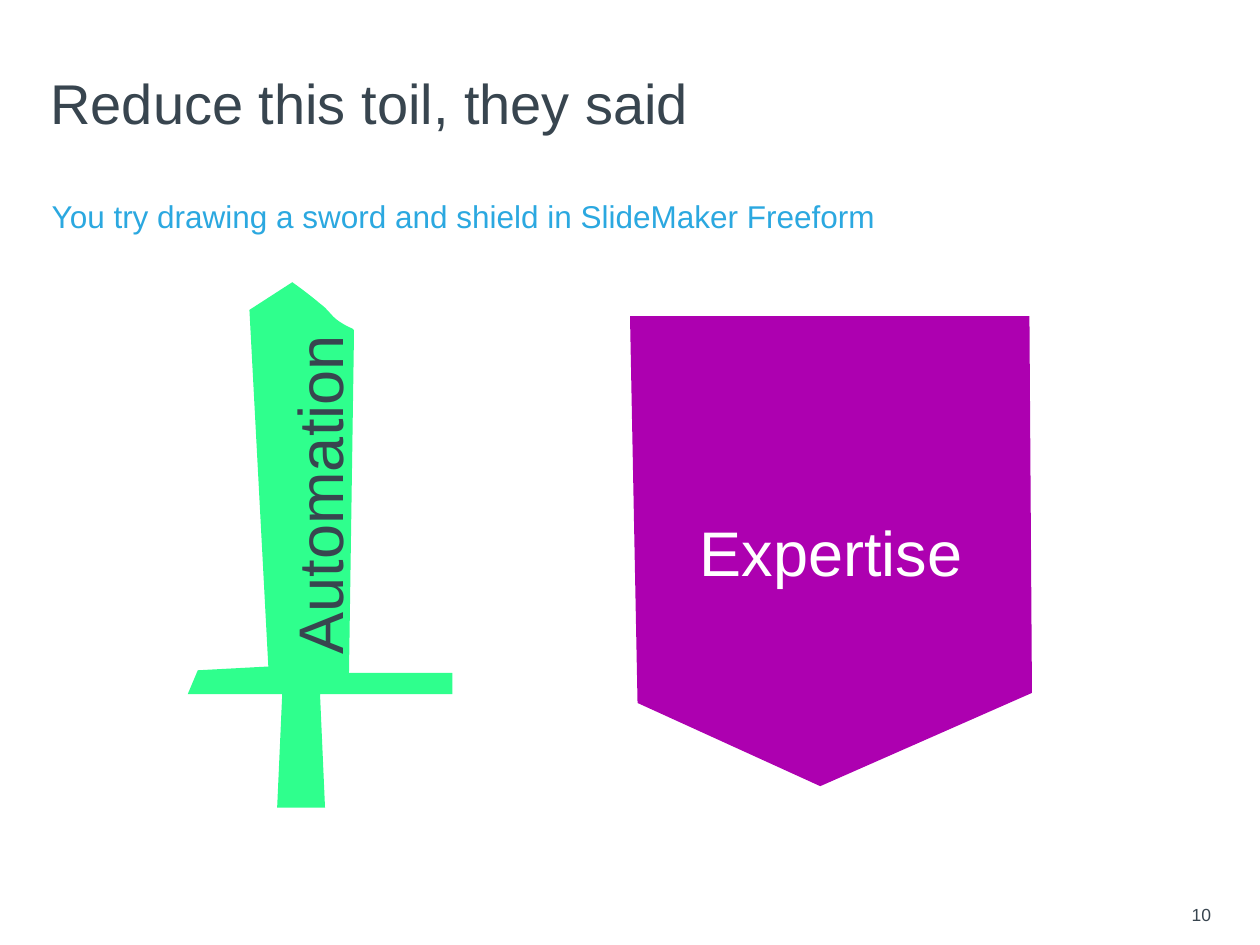
from dataclasses import dataclass

import pptx
import pptx.util
from lxml import etree
from pptx.dml.color import RGBColor
from pptx.enum.text import MSO_ANCHOR, MSO_AUTO_SIZE, PP_ALIGN
from pptx.util import Inches

SLATE = RGBColor(0x38, 0x45, 0x4F)
SKY = RGBColor(0x2B, 0xA8, 0xE0)
GREEN = RGBColor(0x2F, 0xFF, 0x8D)
PURPLE = RGBColor(0xAD, 0x00, 0xB0)
WHITE = RGBColor(0xFF, 0xFF, 0xFF)

Point = tuple[float, float]


@dataclass
class Outline:
    points: list[Point]
    color: RGBColor


def curve(start: Point, first: Point, second: Point, end: Point, steps: int = 8) -> list[Point]:
    """Points along a cubic curve, without its start."""
    points = []
    for step in range(1, steps + 1):
        t = step / steps
        weights = ((1 - t) ** 3, 3 * t * (1 - t) ** 2, 3 * t * t * (1 - t), t ** 3)
        corners = (start, first, second, end)
        points.append(tuple(sum(w * c[axis] for w, c in zip(weights, corners))
                            for axis in (0, 1)))
    return points


def draw_outline(page, outline: Outline):
    points = [(Inches(x), Inches(y)) for x, y in outline.points]
    builder = page.shapes.build_freeform(*points[0])
    builder.add_line_segments(points[1:], close=True)
    shape = builder.convert_to_shape()
    shape.shadow.inherit = False
    shape.fill.solid()
    shape.fill.fore_color.rgb = outline.color
    shape.line.fill.background()
    return shape


def place(box, left: float, top: float, width: float, height: float):
    box.left, box.top = Inches(left), Inches(top)
    box.width, box.height = Inches(width), Inches(height)
    return box


def write(box, text: str, *, size: float, color: RGBColor, align=PP_ALIGN.LEFT,
          anchor=MSO_ANCHOR.MIDDLE, inset: float | None = None,
          wrap: bool = True, spacing: float = 1.0) -> None:
    frame = box.text_frame
    frame.auto_size = MSO_AUTO_SIZE.NONE
    frame.word_wrap = wrap
    frame.vertical_anchor = anchor
    if inset is not None:
        frame.margin_left = frame.margin_right = Inches(inset)
        frame.margin_top = frame.margin_bottom = Inches(inset)
    para = frame.paragraphs[0]
    para.alignment = align
    para.line_spacing = spacing
    para.space_before = pptx.util.Pt(0)
    span = para.add_run()
    span.text = text
    span.font.name = "Arial"
    span.font.size = pptx.util.Pt(size)
    span.font.color.rgb = color


def remove_bullet(para) -> None:
    properties = para._p.get_or_add_pPr()
    properties.set("marL", "0")
    properties.set("indent", "0")
    etree.SubElement(properties, pptx.oxml.ns.qn("a:buNone"))


def main() -> None:
    deck = pptx.Presentation()
    deck.slide_width, deck.slide_height = Inches(10), Inches(7.5)
    page = deck.slides.add_slide(deck.slide_layouts[1])

    # Title and subtitle
    title = place(page.shapes.title, 0.4, 0.64, 9.32, 0.43)
    write(title, "Reduce this toil, they said", size=32, color=SLATE,
          anchor=MSO_ANCHOR.BOTTOM, inset=0, spacing=0.8)
    subtitle = place(page.placeholders[1], 0.41, 1.09, 9.33, 0.77)
    remove_bullet(subtitle.text_frame.paragraphs[0])
    write(subtitle, "You try drawing a sword and shield in SlideMaker Freeform",
          size=18, color=SKY, anchor=MSO_ANCHOR.BOTTOM, inset=0)

    # Sword: tip with a curved edge, then blade, guard and grip
    tip, notch, dip, edge = (2.32, 2.24), (2.54, 2.41), (2.69, 2.55), (2.81, 2.65)
    sword = Outline([
        tip,
        *curve(tip, (2.39, 2.29), (2.47, 2.35), notch),
        *curve(notch, (2.6, 2.45), (2.63, 2.51), dip),
        *curve(dip, (2.81, 2.63), (2.81, 2.59), edge),
        (2.77, 5.34), (3.59, 5.34), (3.59, 5.51), (2.54, 5.51), (2.58, 6.41),
        (2.2, 6.41), (2.24, 5.51), (1.49, 5.51), (1.57, 5.32), (2.13, 5.29),
        (1.98, 2.46),
    ], GREEN)
    draw_outline(page, sword)

    # Shield
    shield = Outline([(5, 2.51), (8.17, 2.51), (8.19, 5.5), (6.51, 6.24), (5.06, 5.58)],
                     PURPLE)
    write(draw_outline(page, shield), "Expertise", size=36, color=WHITE,
          align=PP_ALIGN.CENTER)

    # Sword label, reading upwards
    label = page.shapes.add_textbox(Inches(2.03), Inches(2.73), Inches(1), Inches(2.56))
    write(label, "Automation", size=36, color=SLATE, inset=0.05, wrap=False)
    label.text_frame._txBody.bodyPr.set("vert", "vert270")

    # Page number
    number = page.shapes.add_textbox(Inches(9.14), Inches(6.99), Inches(0.57), Inches(0.4))
    write(number, "10", size=10, color=SLATE, align=PP_ALIGN.RIGHT,
          anchor=MSO_ANCHOR.BOTTOM)

    deck.save("out.pptx")


if __name__ == "__main__":
    main()
